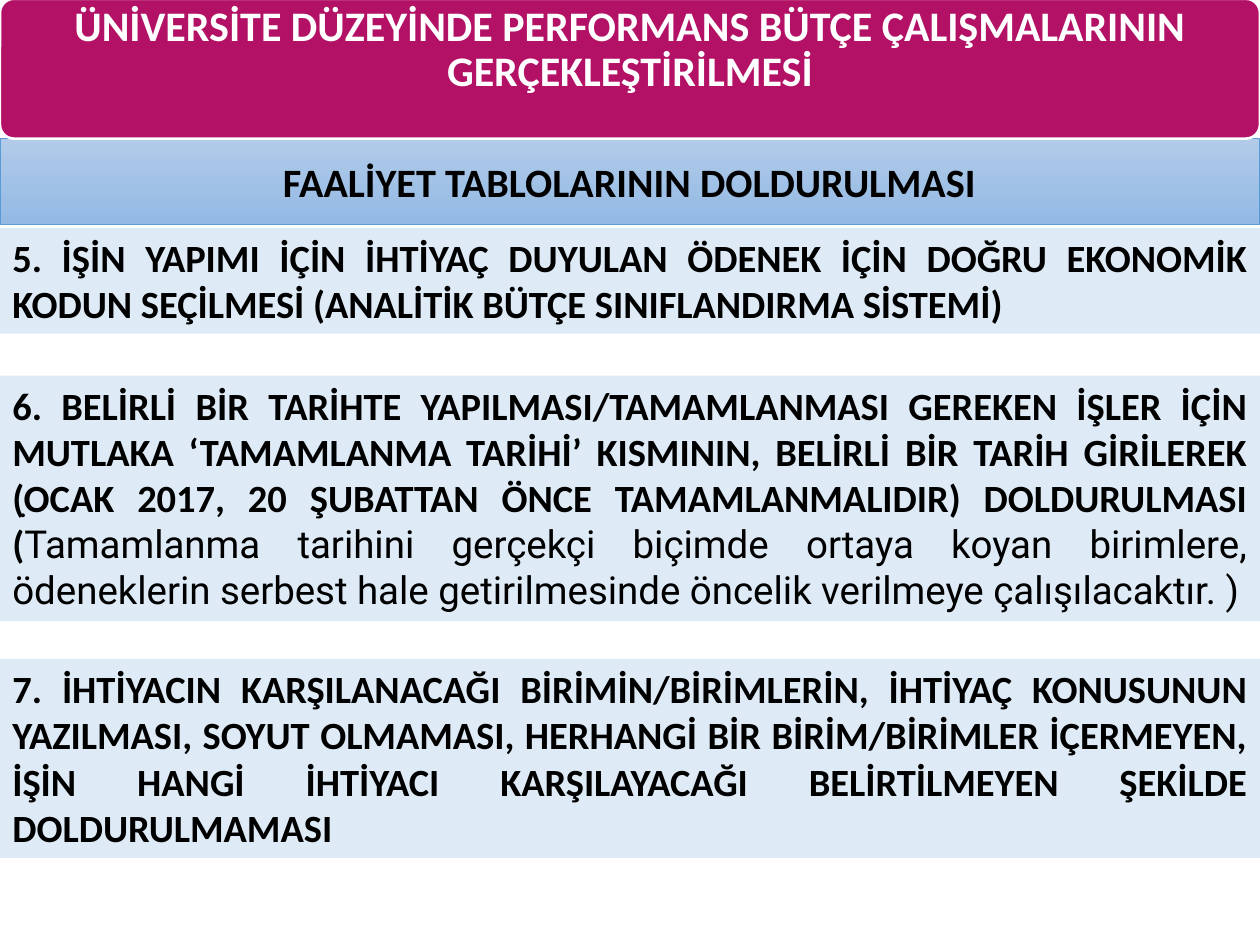
from dataclasses import dataclass

from pptx import Presentation
from pptx.dml.color import RGBColor
from pptx.enum.shapes import MSO_SHAPE
from pptx.enum.text import MSO_ANCHOR, MSO_AUTO_SIZE, PP_ALIGN
from pptx.util import Pt


@dataclass(frozen=True)
class Theme:
    heading_font: str = "Calibri"
    body_font: str = "Roboto"
    title_size: float = 24
    subtitle_size: float = 23
    item_size: float = 22
    note_size: float = 20
    magenta: str = "B31166"
    white: str = "FFFFFF"
    black: str = "000000"
    pale_blue: str = "DEEBF7"
    gradient: tuple = ("B1CBE9", "93B9E4")
    border_blue: str = "5B9BD5"


WIDTH, HEIGHT = 720, 540
ITEM_LINE, ITEM_PADDING = 26.6, 7.2
ITEMS = [
    (130.3, 2, "5. İŞİN YAPIMI İÇİN İHTİYAÇ DUYULAN ÖDENEK İÇİN DOĞRU EKONOMİK KODUN SEÇİLMESİ "
               "(ANALİTİK BÜTÇE SINIFLANDIRMA SİSTEMİ)", ""),
    (214.6, 5, "6. BELİRLİ BİR TARİHTE YAPILMASI/TAMAMLANMASI GEREKEN İŞLER İÇİN MUTLAKA "
               "‘TAMAMLANMA TARİHİ’ KISMININ, BELİRLİ BİR TARİH GİRİLEREK "
               "(OCAK 2017, 20 ŞUBATTAN ÖNCE TAMAMLANMALIDIR) DOLDURULMASI (",
     "Tamamlanma tarihini gerçekçi biçimde ortaya koyan birimlere, ödeneklerin serbest hale "
     "getirilmesinde öncelik verilmeye çalışılacaktır. )"),
    (376.6, 4, "7. İHTİYACIN KARŞILANACAĞI BİRİMİN/BİRİMLERİN, İHTİYAÇ KONUSUNUN YAZILMASI, "
               "SOYUT OLMAMASI, HERHANGİ BİR BİRİM/BİRİMLER İÇERMEYEN, İŞİN HANGİ İHTİYACI "
               "KARŞILAYACAĞI BELİRTİLMEYEN ŞEKİLDE DOLDURULMAMASI", ""),
]


def add_span(para, text, *, font, size, color, bold=False):
    span = para.add_run()
    span.text = text
    span.font.name = font
    span.font.size = Pt(size)
    span.font.bold = bold
    span.font.color.rgb = RGBColor.from_string(color)


class SlideBuilder:
    """Draws the themed elements on one page."""

    def __init__(self, page, theme):
        self.page = page
        self.theme = theme

    def frame(self, box, *, anchor, align, grow=False):
        frame = box.text_frame
        frame.word_wrap = True
        frame.vertical_anchor = anchor
        frame.auto_size = MSO_AUTO_SIZE.SHAPE_TO_FIT_TEXT if grow else MSO_AUTO_SIZE.NONE
        frame.margin_left = frame.margin_right = Pt(7.2)
        frame.margin_top = frame.margin_bottom = Pt(3.6)
        para = frame.paragraphs[0]
        para.alignment = align
        return para

    def panel(self, top, height, *, kind=MSO_SHAPE.RECTANGLE, fill=None, line=None, weight=0):
        box = self.page.shapes.add_shape(kind, 0, Pt(top), Pt(WIDTH), Pt(height))
        box.shadow.inherit = False
        if fill:
            box.fill.solid()
            box.fill.fore_color.rgb = RGBColor.from_string(fill)
        if line:
            box.line.color.rgb = RGBColor.from_string(line)
            box.line.width = Pt(weight)
        else:
            box.line.fill.background()
        return box

    def title(self, top, height, text):
        theme = self.theme
        banner = self.panel(top, height, kind=MSO_SHAPE.ROUNDED_RECTANGLE,
                            fill=theme.magenta, line=theme.white, weight=1.5)
        banner.adjustments[0] = 0.1
        box = self.page.shapes.title
        box.left, box.top, box.width, box.height = 0, Pt(top), Pt(WIDTH), Pt(height)
        self.page.shapes.element.append(box.element)
        para = self.frame(box, anchor=MSO_ANCHOR.TOP, align=PP_ALIGN.CENTER)
        para.line_spacing = 0.9
        para.space_before = Pt(0)
        add_span(para, text, font=theme.heading_font, size=theme.title_size,
                 color=theme.white, bold=True)

    def subtitle(self, top, height, text):
        theme = self.theme
        box = self.panel(top, height, line=theme.border_blue, weight=0.5)
        box.fill.gradient()
        box.fill.gradient_angle = 270
        for stop, color in zip(box.fill.gradient_stops, theme.gradient):
            stop.color.rgb = RGBColor.from_string(color)
        para = self.frame(box, anchor=MSO_ANCHOR.MIDDLE, align=PP_ALIGN.CENTER)
        add_span(para, text, font=theme.heading_font, size=theme.subtitle_size,
                 color=theme.black, bold=True)

    def item(self, top, lines, text, detail):
        theme = self.theme
        box = self.panel(top, lines * ITEM_LINE + ITEM_PADDING, fill=theme.pale_blue)
        para = self.frame(box, anchor=MSO_ANCHOR.TOP, align=PP_ALIGN.JUSTIFY, grow=True)
        add_span(para, text, font=theme.heading_font, size=theme.item_size,
                 color=theme.black, bold=True)
        if detail:
            add_span(para, detail, font=theme.body_font, size=theme.item_size, color=theme.black)

    def note(self, left, top, width, height, text):
        theme = self.theme
        box = self.page.shapes.add_textbox(Pt(left), Pt(top), Pt(width), Pt(height))
        para = self.frame(box, anchor=MSO_ANCHOR.TOP, align=PP_ALIGN.JUSTIFY, grow=True)
        para.line_spacing = 1.07
        add_span(para, text, font=theme.body_font, size=theme.note_size, color=theme.black)


def main():
    deck = Presentation()
    deck.slide_width, deck.slide_height = Pt(WIDTH), Pt(HEIGHT)
    page = deck.slides.add_slide(deck.slide_layouts[5])
    builder = SlideBuilder(page, Theme())
    builder.subtitle(79.2, 49, "FAALİYET TABLOLARININ DOLDURULMASI")
    for item in ITEMS:
        builder.item(*item)
    builder.note(3.6, 270.7, 716.4, 31, ". ")
    builder.title(-0.7, 79.9, "ÜNİVERSİTE DÜZEYİNDE PERFORMANS BÜTÇE ÇALIŞMALARININ GERÇEKLEŞTİRİLMESİ")
    deck.save("out.pptx")


if __name__ == "__main__":
    main()
